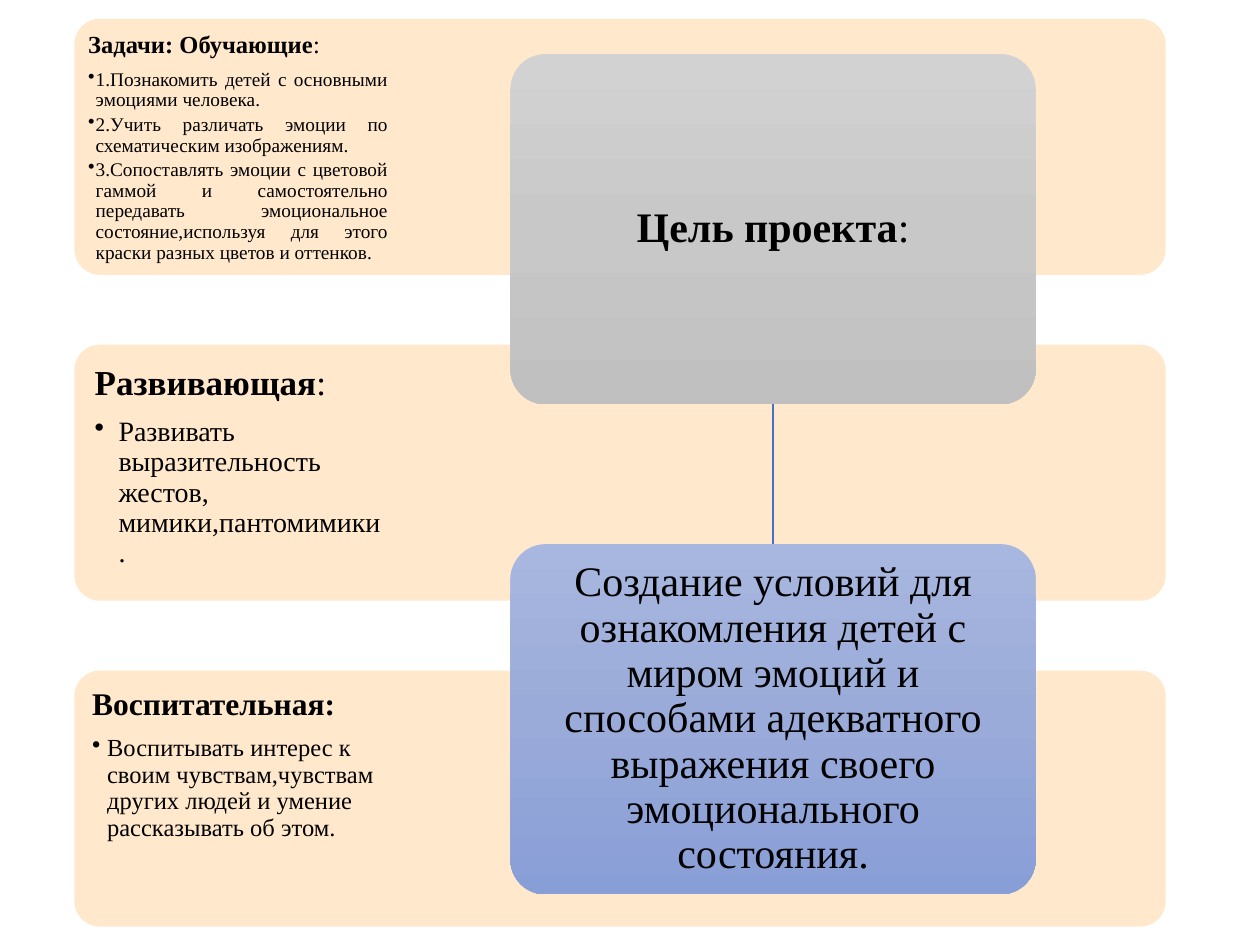
import copy
from dataclasses import dataclass

import lxml.etree
import pptx
import pptx.dml.color
import pptx.enum.shapes
import pptx.enum.text
import pptx.oxml.ns
import pptx.util
from pptx.util import Cm

COLORS = {"text": "000000", "band": "FFE8CC", "connector": "4472C4"}
FONT = "Times New Roman"
ALIGN = pptx.enum.text.PP_ALIGN
ANCHOR = pptx.enum.text.MSO_ANCHOR

BAND_LEFT, BAND_TOP, BAND_WIDTH, BAND_HEIGHT = 1.5, 0.38, 22, 5.16
BAND_PITCH = 6.57
BAND_TEXT_WIDTH = 6.6
CARD_LEFT, CARD_TOP, CARD_WIDTH, CARD_HEIGHT = 10.29, 1.09, 10.59, 7.06
CARD_PITCH = 9.88
CARD_MARGIN = 0.2


@dataclass
class Band:
    heading: str
    heading_tail: str
    heading_size: int
    items: list[str]
    item_size: int
    inset: float
    indent: float
    align: ALIGN = ALIGN.LEFT


@dataclass
class Card:
    text: str
    tail: str
    bold: bool
    gradient: list[str]


BANDS = [
    Band("Задачи: Обучающие", ":", 14, [
        "1.Познакомить детей с основными эмоциями человека.",
        "2.Учить различать эмоции по схематическим изображениям.",
        "3.Сопоставлять эмоции с цветовой гаммой и самостоятельно передавать "
        "эмоциональное состояние,используя для этого краски разных цветов и оттенков.",
    ], 11, 0.28, 0.15, ALIGN.JUSTIFY),
    Band("Развивающая", ":", 20,
         ["Развивать выразительность жестов, мимики,пантомимики."], 16, 0.41, 0.48),
    Band("Воспитательная:", "", 18,
         ["Воспитывать интерес к своим чувствам,чувствам других людей и умение "
          "рассказывать об этом."], 14, 0.36, 0.3),
]
CARDS = [
    Card("Цель проекта", ":", True, ["D2D2D2", "C8C8C8", "C0C0C0"]),
    Card("Создание условий для ознакомления детей с миром эмоций и способами "
         "адекватного выражения своего эмоционального состояния.", "", False,
         ["A8B7DF", "9AABD9", "889ED7"]),
]


def rgb(value: str) -> pptx.dml.color.RGBColor:
    return pptx.dml.color.RGBColor.from_string(value)


def add_rounded(page, left: float, top: float, width: float, height: float):
    shape = page.shapes.add_shape(
        pptx.enum.shapes.MSO_SHAPE.ROUNDED_RECTANGLE,
        Cm(left), Cm(top), Cm(width), Cm(height))
    shape.adjustments[0] = 0.1
    shape.shadow.inherit = False
    shape.line.fill.background()
    return shape


def fill_gradient(shape, stops: list[str]) -> None:
    """Fill from top to bottom with three evenly spaced colours."""
    shape.fill.gradient()
    shape.fill.gradient_angle = 270
    stop_list = shape.element.find(".//" + pptx.oxml.ns.qn("a:gsLst"))
    stop_list.insert(1, copy.deepcopy(stop_list[0]))
    for index, (stop, color) in enumerate(zip(shape.fill.gradient_stops, stops)):
        stop.position = index / 2
        stop.color.rgb = rgb(color)


def add_text_box(page, left: float, top: float, width: float, height: float,
                 inset: float, anchor=ANCHOR.TOP):
    box = page.shapes.add_textbox(Cm(left), Cm(top), Cm(width), Cm(height))
    frame = box.text_frame
    frame.word_wrap = True
    frame.vertical_anchor = anchor
    frame.margin_left = frame.margin_right = Cm(inset)
    frame.margin_top = frame.margin_bottom = Cm(inset)
    return frame


def write(frame, text: str, *, size: int, tail: str = "", bold: bool = False,
          align=ALIGN.LEFT, gap: float = 0.35, indent: float = 0) -> None:
    """Add a paragraph; tail is regular weight, gap is a share of the line,
    and an indent makes the paragraph a bullet."""
    first = frame.paragraphs[0]
    para = frame.add_paragraph() if first.runs else first
    if indent:
        para.level = 1
        properties = para._p.get_or_add_pPr()
        properties.set("marL", str(Cm(indent)))
        properties.set("indent", str(-Cm(indent)))
        bullet = lxml.etree.SubElement(properties, pptx.oxml.ns.qn("a:buChar"))
        bullet.set("char", "•")
    para.alignment = align
    para.line_spacing = 0.9
    para.space_after = pptx.util.Pt(round(size * 1.2 * gap, 1))
    for part, weight in ((text, bold), (tail, False)):
        if part:
            span = para.add_run()
            span.text = part
            span.font.name = FONT
            span.font.size = pptx.util.Pt(size)
            span.font.bold = weight
            span.font.color.rgb = rgb(COLORS["text"])


def draw_band(page, band: Band, top: float) -> None:
    shape = add_rounded(page, BAND_LEFT, top, BAND_WIDTH, BAND_HEIGHT)
    shape.fill.solid()
    shape.fill.fore_color.rgb = rgb(COLORS["band"])
    frame = add_text_box(page, BAND_LEFT, top, BAND_TEXT_WIDTH, BAND_HEIGHT, band.inset)
    write(frame, band.heading, tail=band.heading_tail, size=band.heading_size,
          bold=True, align=band.align)
    for item in band.items:
        write(frame, item, size=band.item_size, align=band.align, gap=0.15,
              indent=band.indent)


def draw_card(page, card: Card, top: float) -> None:
    shape = add_rounded(page, CARD_LEFT, top, CARD_WIDTH, CARD_HEIGHT)
    fill_gradient(shape, card.gradient)
    frame = add_text_box(page, CARD_LEFT + CARD_MARGIN, top + CARD_MARGIN,
                         CARD_WIDTH - 2 * CARD_MARGIN, CARD_HEIGHT - 2 * CARD_MARGIN,
                         0.25, ANCHOR.MIDDLE)
    write(frame, card.text, tail=card.tail, size=24, bold=card.bold, align=ALIGN.CENTER)


def draw_card_link(page) -> None:
    center = Cm(CARD_LEFT + CARD_WIDTH / 2)
    link = page.shapes.add_connector(
        pptx.enum.shapes.MSO_CONNECTOR.STRAIGHT,
        center, Cm(CARD_TOP + CARD_HEIGHT), center, Cm(CARD_TOP + CARD_PITCH))
    link.line.color.rgb = rgb(COLORS["connector"])
    link.line.width = pptx.util.Pt(1)
    lxml.etree.SubElement(link.element.spPr, pptx.oxml.ns.qn("a:effectLst"))


def main() -> None:
    deck = pptx.Presentation()
    deck.slide_width, deck.slide_height = Cm(25.4), Cm(19.05)
    page = deck.slides.add_slide(deck.slide_layouts[6])
    for index, band in enumerate(BANDS):
        draw_band(page, band, BAND_TOP + index * BAND_PITCH)
    draw_card_link(page)
    for index, card in enumerate(CARDS):
        draw_card(page, card, CARD_TOP + index * CARD_PITCH)
    deck.save("out.pptx")


if __name__ == "__main__":
    main()
